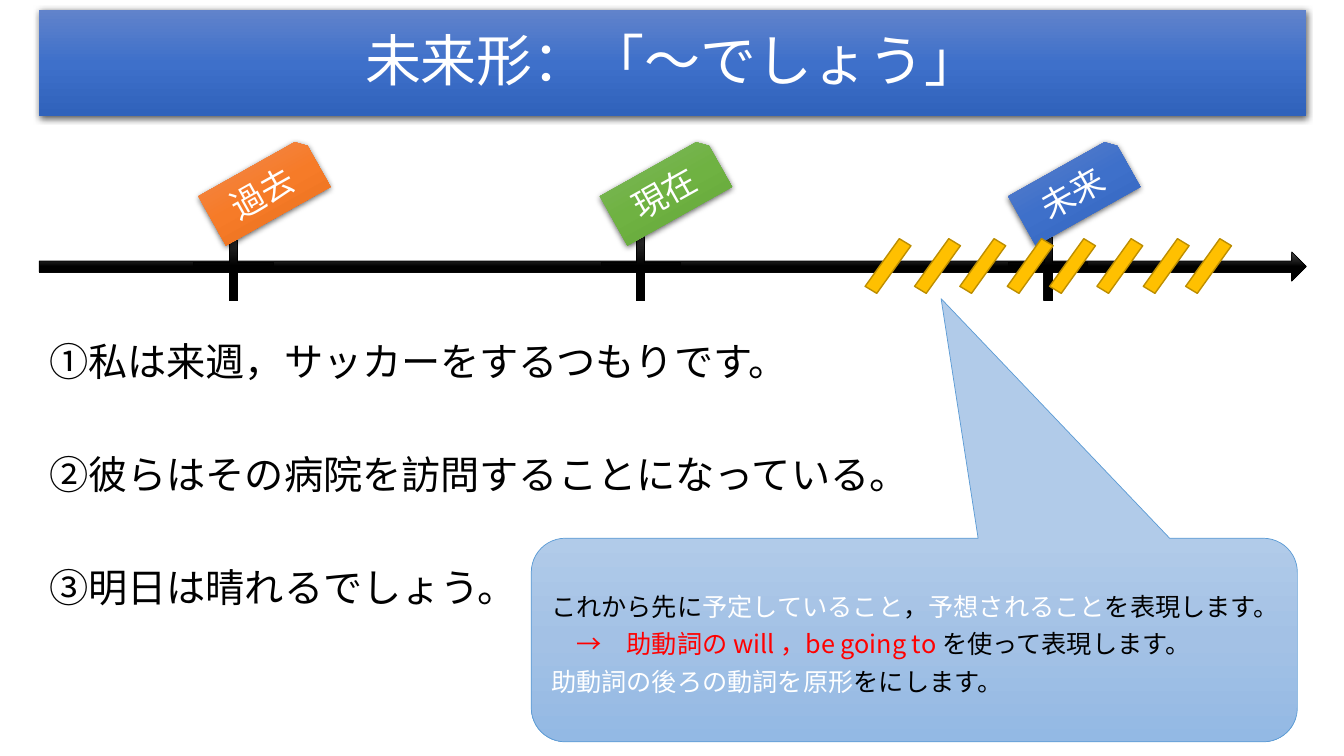
import dataclasses

import lxml.etree
import pptx
import pptx.dml.color
import pptx.enum.shapes
import pptx.enum.text
import pptx.oxml.ns
import pptx.util

FORMS = pptx.enum.shapes.MSO_SHAPE
ALIGN = pptx.enum.text.PP_ALIGN
ANCHOR = pptx.enum.text.MSO_ANCHOR
qn = pptx.oxml.ns.qn


@dataclasses.dataclass(frozen=True)
class Theme:
    """Colours, font and type sizes of the lesson."""

    font: str = "Noto Sans CJK JP"
    title_size: int = 40
    example_size: int = 28
    tag_size: int = 24
    note_size: int = 18
    ink: str = "000000"
    light: str = "FFFFFF"
    accent: str = "FF0000"
    stripe: str = "FFC000"
    stripe_edge: str = "BD8E00"
    note_edge: str = "5B9BD5"
    note: tuple = ("B1CBE9", "A3C1E5", "93B9E4")
    blue: tuple = ("6183CB", "3E70CA", "3062BB")
    orange: tuple = ("F18C57", "F67B28", "E56C19")
    green: tuple = ("81B861", "6FB242", "62A336")
    black: tuple = ("4B4B4B", "000000", "000000")


class LessonSlide:
    """Draws on one slide, with lengths in percent of its size."""

    def __init__(self, deck, theme):
        """Add a blank slide to the deck."""
        self.deck = deck
        self.theme = theme
        self.slide = deck.slides.add_slide(deck.slide_layouts[6])

    def place(self, box):
        """Turn percentages into slide lengths."""
        sides = (self.deck.slide_width, self.deck.slide_height) * 2
        return [round(side * share / 100) for side, share in zip(sides, box)]

    def form(self, kind, box, fill, edge=None, edge_width=0.5, turn=0, adjust=(), shadow=False):
        """Add a preset shape with a plain or a three-stop fill."""
        form = self.slide.shapes.add_shape(kind, *self.place(box))
        form.rotation = turn
        form.shadow.inherit = False
        for index, value in enumerate(adjust):
            form.adjustments[index] = value
        if isinstance(fill, str):
            form.fill.solid()
            form.fill.fore_color.rgb = pptx.dml.color.RGBColor.from_string(fill)
        else:
            self.blend(form, fill)
        if edge:
            form.line.color.rgb = pptx.dml.color.RGBColor.from_string(edge)
            form.line.width = pptx.util.Pt(edge_width)
        else:
            form.line.fill.background()
        if shadow:
            self.cast_shadow(form)
        return form

    def blend(self, form, colours):
        """Fill from top to bottom through evenly spaced colours."""
        form.fill.gradient()
        form.fill.gradient_angle = 270
        stops = form.element.spPr.find(".//" + qn("a:gsLst"))
        for stop in list(stops):
            stops.remove(stop)
        for index, colour in enumerate(colours):
            position = index * 100000 // (len(colours) - 1)
            stop = lxml.etree.SubElement(stops, qn("a:gs"), pos=str(position))
            lxml.etree.SubElement(stop, qn("a:srgbClr"), val=colour)

    def cast_shadow(self, form):
        """Add a soft shadow below a shape."""
        effects = form.element.spPr.find(qn("a:effectLst"))
        shadow = lxml.etree.SubElement(
            effects, qn("a:outerShdw"), blurRad="57150", dist="19050",
            dir="5400000", algn="ctr", rotWithShape="0")
        colour = lxml.etree.SubElement(shadow, qn("a:srgbClr"), val=self.theme.ink)
        lxml.etree.SubElement(colour, qn("a:alpha"), val="63000")

    def text_area(self, box):
        """Add a wrapping text box."""
        area = self.slide.shapes.add_textbox(*self.place(box))
        area.text_frame.word_wrap = True
        return area

    def add_lines(self, holder, lines, size, align=ALIGN.CENTER, spacing=1.0, gap=0):
        """Fill a shape with lines made of (text, colour) runs."""
        frame = holder.text_frame
        for index, runs in enumerate(lines):
            line = frame.add_paragraph() if index else frame.paragraphs[0]
            line.alignment = align
            line.line_spacing = spacing
            line.space_before = pptx.util.Pt(gap if index else 0)
            for text, colour in runs:
                run = line.add_run()
                run.text = text
                run.font.size = pptx.util.Pt(size)
                run.font.name = self.theme.font
                run.font.color.rgb = pptx.dml.color.RGBColor.from_string(colour)
                lxml.etree.SubElement(
                    run.font._element, qn("a:ea"), typeface=self.theme.font)

    def tag(self, left, label, colours):
        """Add a tilted label above the time line."""
        tag = self.form(FORMS.SNIP_ROUND_RECTANGLE, (left, 21.6, 8.92, 7.47), colours,
                        turn=330.7, adjust=(0, 0.167), shadow=True)
        frame = tag.text_frame
        frame.margin_left = frame.margin_right = frame.margin_top = frame.margin_bottom = 0
        frame.vertical_anchor = ANCHOR.MIDDLE
        self.add_lines(tag, [[(label, self.theme.light)]], self.theme.tag_size)


def main():
    """Build the lesson slide and save it."""
    deck = pptx.Presentation()
    deck.slide_width = pptx.util.Inches(13.33)
    deck.slide_height = pptx.util.Inches(7.5)
    theme = Theme()
    lesson = LessonSlide(deck, theme)
    margin, breadth = 2.92, 94.28

    usage = lesson.form(FORMS.ROUNDED_RECTANGULAR_CALLOUT, (39.53, 71.2, 57, 26.93),
                        theme.note, theme.note_edge, adjust=(0.035, -1.677, 0.167))
    usage.text_frame.vertical_anchor = ANCHOR.MIDDLE
    lesson.add_lines(usage, [
        [("これから先に", theme.ink), ("予定していること", theme.light), ("，", theme.ink),
         ("予想されること", theme.light), ("を表現します。", theme.ink)],
        [("　→　助動詞の will ，be going to ", theme.accent),
         ("を使って表現します。", theme.ink)],
        [("助動詞の後ろの動詞を原形", theme.light), ("をにします。", theme.ink)],
    ], theme.note_size, ALIGN.LEFT, spacing=1.25)

    heading = lesson.form(FORMS.RECTANGLE, (margin, 1.33, breadth, 14), theme.blue, shadow=True)
    heading.text_frame.vertical_anchor = ANCHOR.MIDDLE
    lesson.add_lines(heading, [[("未来形：「～でしょう」", theme.light)]],
                     theme.title_size, spacing=0.9)

    examples = ("①私は来週，サッカーをするつもりです。",
                "②彼らはその病院を訪問することになっている。",
                "③明日は晴れるでしょう。")
    lesson.add_lines(lesson.text_area((margin, 44.67, breadth, 54.13)),
                     [[(example, theme.ink)] for example in examples],
                     theme.example_size, ALIGN.LEFT, spacing=0.9, gap=50.5)

    lesson.form(FORMS.RIGHT_ARROW, (margin, 33.33, breadth, 3.87), theme.black, theme.ink,
                adjust=(0.375, 0.5))
    for moment in range(3):
        lesson.form(FORMS.MATH_PLUS, (13.35 + 30.31 * moment, 29.2, 8.02, 12.13),
                    theme.black, theme.ink, adjust=(0.09,))
    for left, label, colours in ((15.22, "過去", theme.orange),
                                 (45.09, "現在", theme.green),
                                 (75.47, "未来", theme.blue)):
        lesson.tag(left, label, colours)
    for left in (65.4, 69.08, 72.45, 75.98, 79.13, 82.65, 86.1, 89.25):
        lesson.form(FORMS.PARALLELOGRAM, (left, 31.33, 1.35, 7.73), theme.stripe,
                    theme.stripe_edge, edge_width=1, turn=31.2)

    deck.save("out.pptx")


if __name__ == "__main__":
    main()
